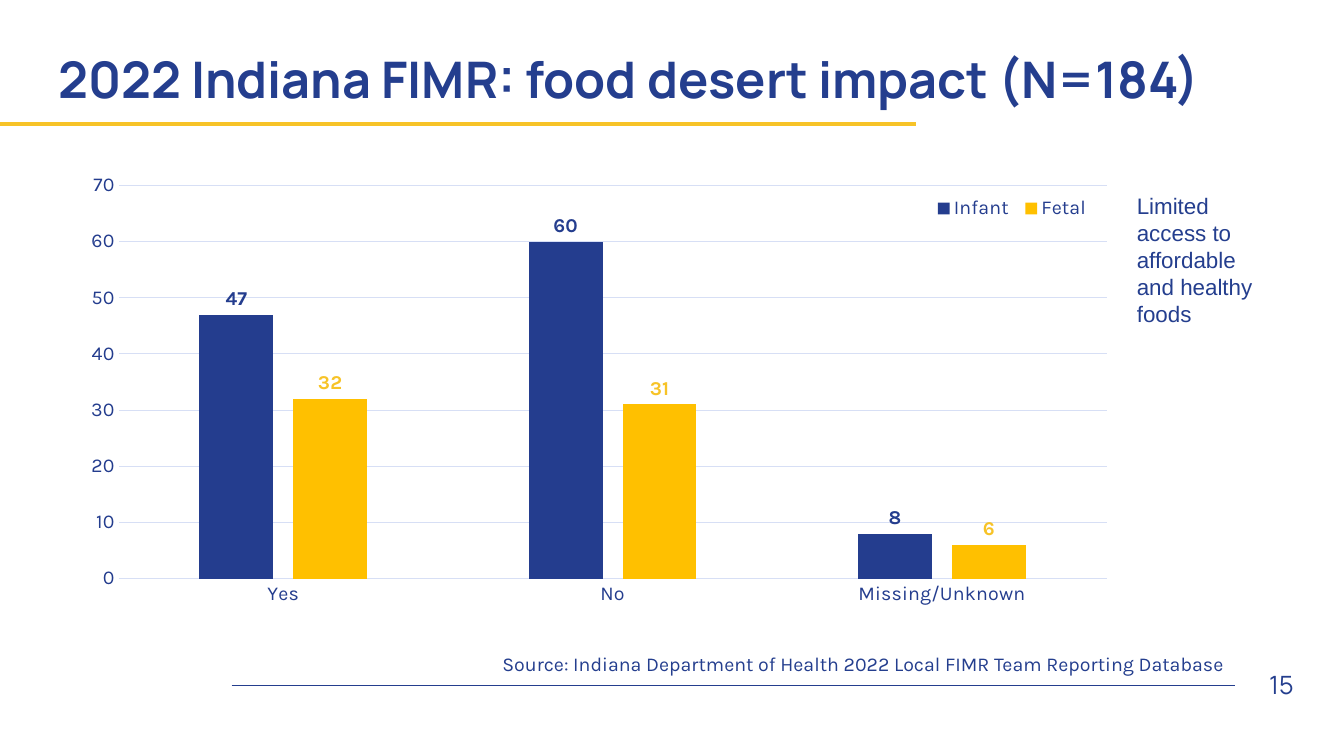
from dataclasses import dataclass

from lxml.etree import SubElement
from pptx import Presentation
from pptx.chart.data import CategoryChartData
from pptx.dml.color import RGBColor
from pptx.enum.chart import XL_CHART_TYPE, XL_LABEL_POSITION, XL_LEGEND_POSITION, XL_TICK_MARK
from pptx.enum.shapes import MSO_CONNECTOR
from pptx.enum.text import MSO_ANCHOR, PP_ALIGN
from pptx.oxml import parse_xml
from pptx.oxml.ns import nsdecls, qn
from pptx.util import Cm, Pt


@dataclass(frozen=True)
class Theme:
    navy: RGBColor = RGBColor(0x24, 0x3E, 0x8E)
    ink: RGBColor = RGBColor(0x24, 0x3D, 0x8E)
    gold: RGBColor = RGBColor(0xF7, 0xC3, 0x27)
    amber: RGBColor = RGBColor(0xFF, 0xC0, 0x00)
    pale: RGBColor = RGBColor(0xD7, 0xDF, 0xF5)
    head: str = "Manrope"
    body: str = "Karla"
    plain: str = "Arial"
    title: int = 36
    page: int = 18
    note: int = 16
    small: int = 14


@dataclass(frozen=True)
class Label:
    text: str
    box: tuple
    font: str
    size: int
    bold: bool = False
    align: PP_ALIGN = PP_ALIGN.LEFT
    anchor: MSO_ANCHOR = MSO_ANCHOR.TOP
    space: float = 1.0


@dataclass(frozen=True)
class Rule:
    left: float
    right: float
    top: float
    color: RGBColor
    width: float


@dataclass(frozen=True)
class Series:
    name: str
    values: tuple
    fill: RGBColor
    color: RGBColor


LOOK = Theme()

RULES = (
    Rule(5.84, 31.12, 17.27, LOOK.navy, 1),
    Rule(0, 23.09, 3.12, LOOK.gold, 3),
)

LABELS = (
    Label("2022 Indiana FIMR: food desert impact (N=184)", (1.22, 1.02, 30.33, 2.11),
          LOOK.head, LOOK.title, bold=True, anchor=MSO_ANCHOR.MIDDLE, space=0.9),
    Label("15", (31.12, 16.74, 1.73, 1.02), LOOK.head, LOOK.page,
          align=PP_ALIGN.RIGHT, anchor=MSO_ANCHOR.MIDDLE),
    Label("Source: Indiana Department of Health 2022 Local FIMR Team Reporting Database",
          (7.49, 16.31, 23.62, 0.86), LOOK.body, LOOK.small, align=PP_ALIGN.RIGHT),
    Label("Limited access to affordable and healthy foods", (28.4, 4.72, 4.06, 3.68),
          LOOK.plain, LOOK.note),
)

GROUPS = ("Yes", "No", "Missing/Unknown")
SERIES = (
    Series("Infant", (47, 60, 8), LOOK.ink, LOOK.ink),
    Series("Fetal", (32, 31, 6), LOOK.amber, LOOK.gold),
)


def apply(item, form: dict) -> None:
    for name, value in form.items():
        setattr(item, name, value)


def style(font, face: str, size: int, color: RGBColor, bold: bool = False) -> None:
    apply(font, {"name": face, "size": Pt(size), "bold": bold})
    font.color.rgb = color


def stroke(line, color: RGBColor, width: float) -> None:
    line.color.rgb = color
    line.width = Pt(width)


def draw_rule(slide, rule: Rule) -> None:
    line = slide.shapes.add_connector(
        MSO_CONNECTOR.STRAIGHT, Cm(rule.left), Cm(rule.top), Cm(rule.right), Cm(rule.top))
    stroke(line.line, rule.color, rule.width)
    SubElement(line._element.spPr, qn("a:effectLst"))


def draw_label(slide, label: Label) -> None:
    frame = slide.shapes.add_textbox(*map(Cm, label.box)).text_frame
    apply(frame, {"word_wrap": True, "vertical_anchor": label.anchor})
    para = frame.paragraphs[0]
    apply(para, {"alignment": label.align, "line_spacing": label.space})
    run = para.add_run()
    run.text = label.text
    style(run.font, label.font, label.size, LOOK.navy, label.bold)


def place(owner, index: int, box: tuple, inner: bool = False) -> None:
    for old in owner.findall(qn("c:layout")):
        owner.remove(old)
    target = '<c:layoutTarget val="inner"/>' if inner else ""
    modes = "".join(f'<c:{key}Mode val="edge"/>' for key in "xy")
    sizes = "".join(f'<c:{key} val="{value}"/>' for key, value in zip("xywh", box))
    owner.insert(index, parse_xml(
        f'<c:layout {nsdecls("c")}><c:manualLayout>{target}{modes}{sizes}'
        "</c:manualLayout></c:layout>"))


def draw_chart(slide) -> None:
    data = CategoryChartData()
    data.categories = GROUPS
    for item in SERIES:
        data.add_series(item.name, item.values)
    box = map(Cm, (1.93, 4.09, 26.49, 11.66))
    chart = slide.shapes.add_chart(XL_CHART_TYPE.COLUMN_CLUSTERED, *box, data).chart
    apply(chart, {"has_title": False, "has_legend": True})
    style(chart.font, LOOK.body, LOOK.small, LOOK.ink)

    apply(chart.legend, {"position": XL_LEGEND_POSITION.BOTTOM, "include_in_layout": False})
    style(chart.legend.font, LOOK.body, LOOK.small, LOOK.ink)
    place(chart.legend._element, 1, (0.81, 0.07, 0.16, 0.06))
    place(chart._chartSpace.chart.plotArea, 0, (0.04, 0.05, 0.94, 0.85), inner=True)

    ticks = {"major_tick_mark": XL_TICK_MARK.NONE, "minor_tick_mark": XL_TICK_MARK.NONE}
    base, scale = chart.category_axis, chart.value_axis
    for axis in (base, scale):
        apply(axis, ticks)
        style(axis.tick_labels.font, LOOK.body, LOOK.small, LOOK.ink)
    stroke(base.format.line, LOOK.pale, 0.75)
    apply(scale, {"minimum_scale": 0, "maximum_scale": 70, "major_unit": 10,
                  "has_major_gridlines": True})
    scale.format.line.fill.background()
    stroke(scale.major_gridlines.format.line, LOOK.pale, 0.75)

    plot = chart.plots[0]
    apply(plot, {"gap_width": 219, "overlap": -27, "vary_by_categories": False})
    for bars, item in zip(plot.series, SERIES):
        bars.format.fill.solid()
        bars.format.fill.fore_color.rgb = item.fill
        apply(bars.data_labels, {"show_value": True, "position": XL_LABEL_POSITION.OUTSIDE_END})
        style(bars.data_labels.font, LOOK.body, LOOK.small, item.color, True)


def main() -> None:
    deck = Presentation()
    apply(deck, {"slide_width": Cm(33.87), "slide_height": Cm(19.05)})
    slide = deck.slides.add_slide(deck.slide_layouts[6])
    for rule in RULES:
        draw_rule(slide, rule)
    for label in LABELS:
        draw_label(slide, label)
    draw_chart(slide)
    deck.save("out.pptx")


if __name__ == "__main__":
    main()
